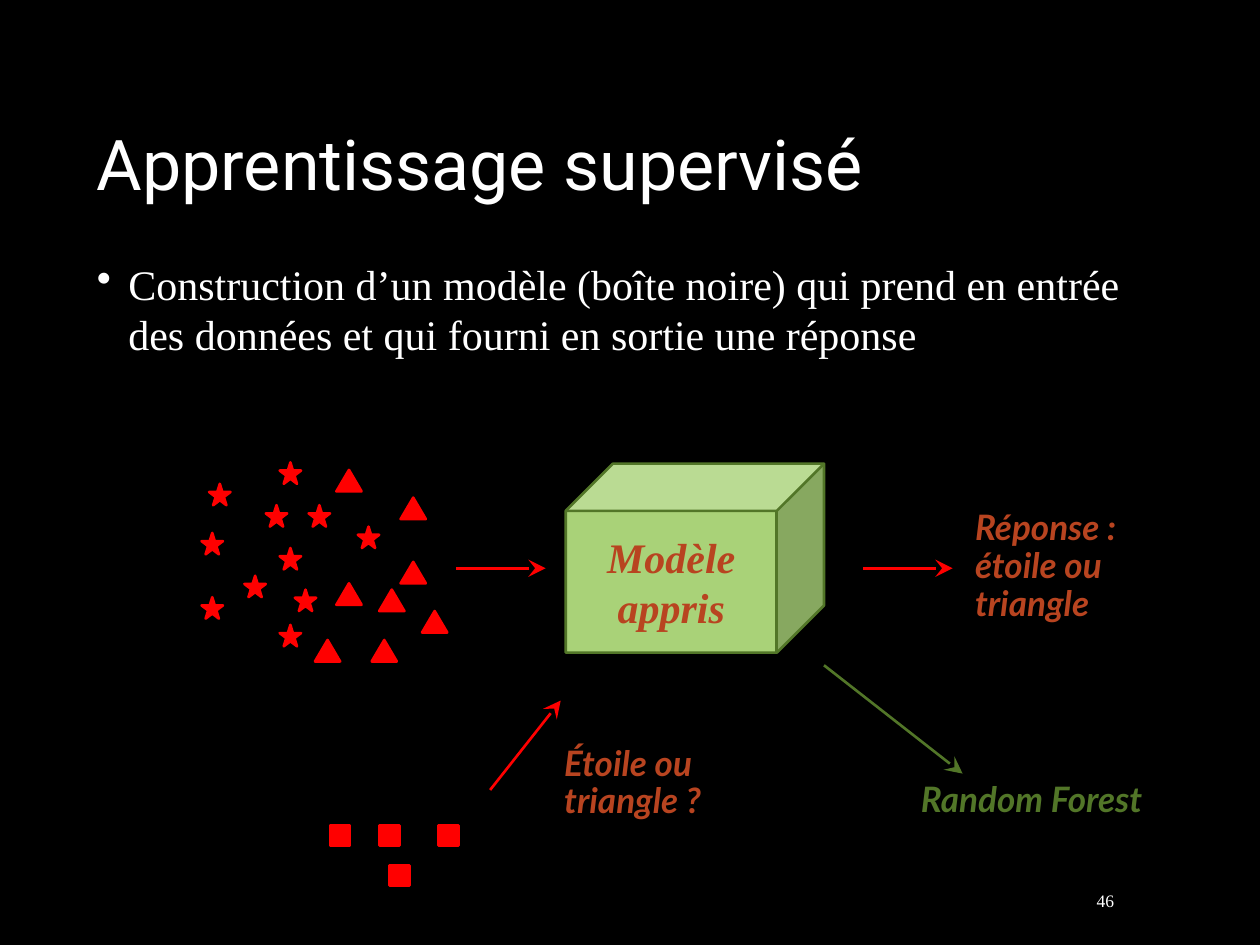
from lxml import etree
from pptx import Presentation
from pptx.dml.color import RGBColor
from pptx.enum.shapes import MSO_CONNECTOR as Connector, MSO_SHAPE as Shape
from pptx.enum.text import MSO_ANCHOR as Anchor, PP_ALIGN as Align
from pptx.oxml.ns import qn
from pptx.util import Inches, Pt

BLACK = RGBColor(0x00, 0x00, 0x00)
WHITE = RGBColor(0xFF, 0xFF, 0xFF)
RED = RGBColor(0xFF, 0x00, 0x00)
RUST = RGBColor(0xB8, 0x44, 0x20)
LIGHT_GREEN = RGBColor(0xA9, 0xD2, 0x78)
DARK_GREEN = RGBColor(0x52, 0x76, 0x28)

SERIF = "Times New Roman"
LABEL_FONT = {"name": "Lato", "size": Pt(20), "bold": True, "italic": True}
LABEL_PARA = {"line_spacing": 0.9}

STARS = [
    (1.66, 3.84), (1.6, 4.23), (2.45, 4.01), (1.94, 4.57), (2.11, 4.01), (1.6, 4.74),
    (2.22, 4.96), (2.22, 4.35), (2.84, 4.18), (2.34, 4.68), (2.22, 3.67),
]
TRIANGLES = [
    (3.18, 3.95), (2.67, 4.63), (2.67, 3.73), (3.18, 4.46),
    (3.01, 4.68), (2.5, 5.08), (2.95, 5.08), (3.35, 4.85),
]
SQUARES = [(2.62, 6.55), (3.01, 6.55), (3.48, 6.55), (3.09, 6.87)]


def write(sp, text, color, font, para=None, anchor=Anchor.TOP, bullet=False):
    tf = sp.text_frame
    tf.word_wrap = True
    tf.vertical_anchor = anchor
    p = tf.paragraphs[0]
    for name, value in (para or {}).items():
        setattr(p, name, value)
    if bullet:
        pPr = p._p.get_or_add_pPr()
        pPr.set("marL", str(Inches(0.25)))
        pPr.set("indent", str(Inches(-0.25)))
        etree.SubElement(pPr, qn("a:buChar")).set("char", "•")
    r = p.add_run()
    r.text = text
    for name, value in font.items():
        setattr(r.font, name, value)
    r.font.color.rgb = color


def add_text(shapes, box, *args, **kwargs):
    write(shapes.add_textbox(*map(Inches, box)), *args, **kwargs)


def add_shape(shapes, kind, box, fill, line):
    sp = shapes.add_shape(kind, *map(Inches, box))
    sp.shadow.inherit = False
    sp.fill.solid()
    sp.fill.fore_color.rgb = fill
    sp.line.color.rgb = line
    sp.line.width = Pt(1.5)
    return sp


def add_markers(shapes, kind, points, width, height):
    for x, y in points:
        add_shape(shapes, kind, (x, y, width, height), RED, RED)


def add_arrow(shapes, start, end, color):
    line = shapes.add_connector(Connector.STRAIGHT, *map(Inches, start + end))
    line.line.color.rgb = color
    line.line.width = Pt(1.5)
    head = etree.SubElement(line.line._get_or_add_ln(), qn("a:tailEnd"))
    for name, value in {"type": "stealth", "w": "lg", "len": "lg"}.items():
        head.set(name, value)
    etree.SubElement(line._element.spPr, qn("a:effectLst"))


def main():
    prs = Presentation()
    prs.slide_width, prs.slide_height = Inches(10), Inches(7.5)
    s = prs.slides.add_slide(prs.slide_layouts[6])
    s.background.fill.solid()
    s.background.fill.fore_color.rgb = BLACK
    shapes = s.shapes

    add_text(shapes, (0.67, 0.42, 8.66, 1.25), "Apprentissage supervisé", WHITE,
             {"name": "Roboto", "size": Pt(40)}, {"line_spacing": 0.8}, Anchor.BOTTOM)
    add_text(shapes, (0.67, 2, 8.66, 4.75),
             "Construction d’un modèle (boîte noire) qui prend en entrée des données "
             "et qui fourni en sortie une réponse",
             WHITE, {"name": SERIF, "size": Pt(24)}, {"space_after": Pt(3)}, bullet=True)
    add_text(shapes, (7.94, 7, 1, 0.3), "46", WHITE, {"name": SERIF, "size": Pt(10)},
             {"alignment": Align.RIGHT}, Anchor.MIDDLE)

    model = add_shape(shapes, Shape.CUBE, (4.49, 3.68, 2.05, 1.5), LIGHT_GREEN, DARK_GREEN)
    write(model, "Modèle appris", RUST,
          {"name": SERIF, "size": Pt(24), "bold": True, "italic": True},
          {"alignment": Align.CENTER}, Anchor.MIDDLE)

    training = shapes.add_group_shape().shapes
    add_markers(training, Shape.STAR_5_POINT, STARS, 0.17, 0.17)
    add_markers(training, Shape.ISOSCELES_TRIANGLE, TRIANGLES, 0.2, 0.17)
    add_markers(shapes.add_group_shape().shapes, Shape.RECTANGLE, SQUARES, 0.16, 0.16)

    add_arrow(shapes, (3.62, 4.51), (4.33, 4.51), RED)
    add_arrow(shapes, (6.85, 4.51), (7.56, 4.51), RED)
    add_text(shapes, (7.64, 4, 1.85, 1.01), "Réponse : étoile ou triangle",
             RUST, LABEL_FONT, LABEL_PARA)
    add_arrow(shapes, (3.89, 6.27), (4.45, 5.56), RED)
    add_text(shapes, (4.38, 5.87, 2, 0.71), "Étoile ou triangle ?",
             RUST, LABEL_FONT, LABEL_PARA)

    method = shapes.add_group_shape().shapes
    add_arrow(method, (6.54, 5.28), (7.64, 6.14), DARK_GREEN)
    add_text(method, (7.21, 6.16, 2, 0.71), "Random Forest", DARK_GREEN, LABEL_FONT, LABEL_PARA)

    prs.save("out.pptx")


if __name__ == "__main__":
    main()
